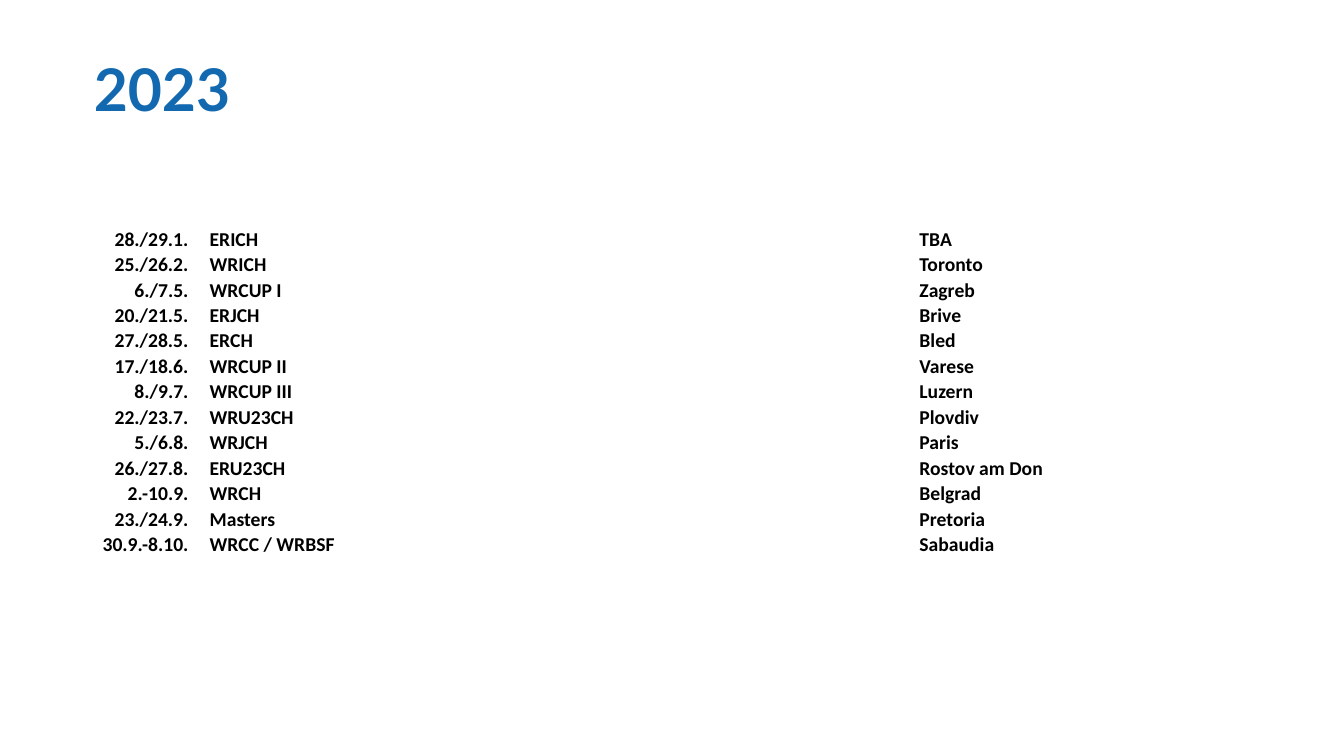
from pptx import Presentation
from pptx.dml.color import RGBColor
from pptx.enum.text import MSO_ANCHOR, PP_ALIGN
from pptx.oxml.ns import qn
from pptx.util import Inches, Pt
from lxml import etree

LEFT, RIGHT = PP_ALIGN.LEFT, PP_ALIGN.RIGHT
MIDDLE, BOTTOM = MSO_ANCHOR.MIDDLE, MSO_ANCHOR.BOTTOM
TITLE_ONLY = 5
BLUE, BLACK, WHITE = "1369B0", "000000", "FFFFFF"

WIDTHS = [1.04, 0.19, 7.04, 2.29]
HEIGHT = 3.29
RACES = [
    ("28./29.1.", "ERICH", "TBA"),
    ("25./26.2.", "WRICH", "Toronto"),
    ("6./7.5.", "WRCUP I", "Zagreb"),
    ("20./21.5.", "ERJCH", "Brive"),
    ("27./28.5.", "ERCH", "Bled"),
    ("17./18.6.", "WRCUP II", "Varese"),
    ("8./9.7.", "WRCUP III", "Luzern"),
    ("22./23.7.", "WRU23CH", "Plovdiv"),
    ("5./6.8.", "WRJCH", "Paris"),
    ("26./27.8.", "ERU23CH", "Rostov am Don"),
    ("2.-10.9.", "WRCH", "Belgrad"),
    ("23./24.9.", "Masters", "Pretoria"),
    ("30.9.-8.10.", "WRCC / WRBSF", "Sabaudia"),
]


def color(code):
    return RGBColor.from_string(code)


def write(frame, text, font="Calibri", size=14, ink=BLACK, align=LEFT, space=1.0):
    para = frame.paragraphs[0]
    para.alignment = align
    para.line_spacing = space
    if not text:
        # An empty cell would otherwise take the default size and stretch its row
        etree.SubElement(para._p, qn("a:endParaRPr"), sz=str(size * 100))
        return
    run = para.add_run()
    run.text = text
    run.font.name = font
    run.font.size = Pt(size)
    run.font.bold = True
    run.font.color.rgb = color(ink)


def add_title(slide, text):
    title = slide.shapes.title
    title.left, title.top = Inches(0.83), Inches(0.36)
    title.width, title.height = Inches(9.73), Inches(1.12)
    title.text_frame.vertical_anchor = MIDDLE
    write(title.text_frame, text, font="Lato", size=42, ink=BLUE, space=0.9)


def fill_cell(cell, text, align):
    cell.fill.solid()
    cell.fill.fore_color.rgb = color(WHITE)
    cell.vertical_anchor = BOTTOM
    cell.margin_left = cell.margin_right = cell.margin_top = Inches(0.01)
    cell.margin_bottom = 0
    write(cell.text_frame, text, align=align)


def add_races(slide):
    frame = slide.shapes.add_table(
        len(RACES), len(WIDTHS), Inches(0.84), Inches(2.24),
        Inches(sum(WIDTHS)), Inches(HEIGHT))
    table = frame.table
    table.first_row = table.horz_banding = False
    for col, width in zip(table.columns, WIDTHS):
        col.width = Inches(width)
    for row, (date, race, place) in zip(table.rows, RACES):
        row.height = Inches(HEIGHT / len(RACES))
        for i, text in enumerate((date, "", race, place)):
            fill_cell(row.cells[i], text, RIGHT if i == 0 else LEFT)


def main():
    deck = Presentation()
    deck.slide_width, deck.slide_height = Inches(13.33), Inches(7.5)
    slide = deck.slides.add_slide(deck.slide_layouts[TITLE_ONLY])
    add_title(slide, "2023")
    add_races(slide)
    deck.save("out.pptx")


if __name__ == "__main__":
    main()
